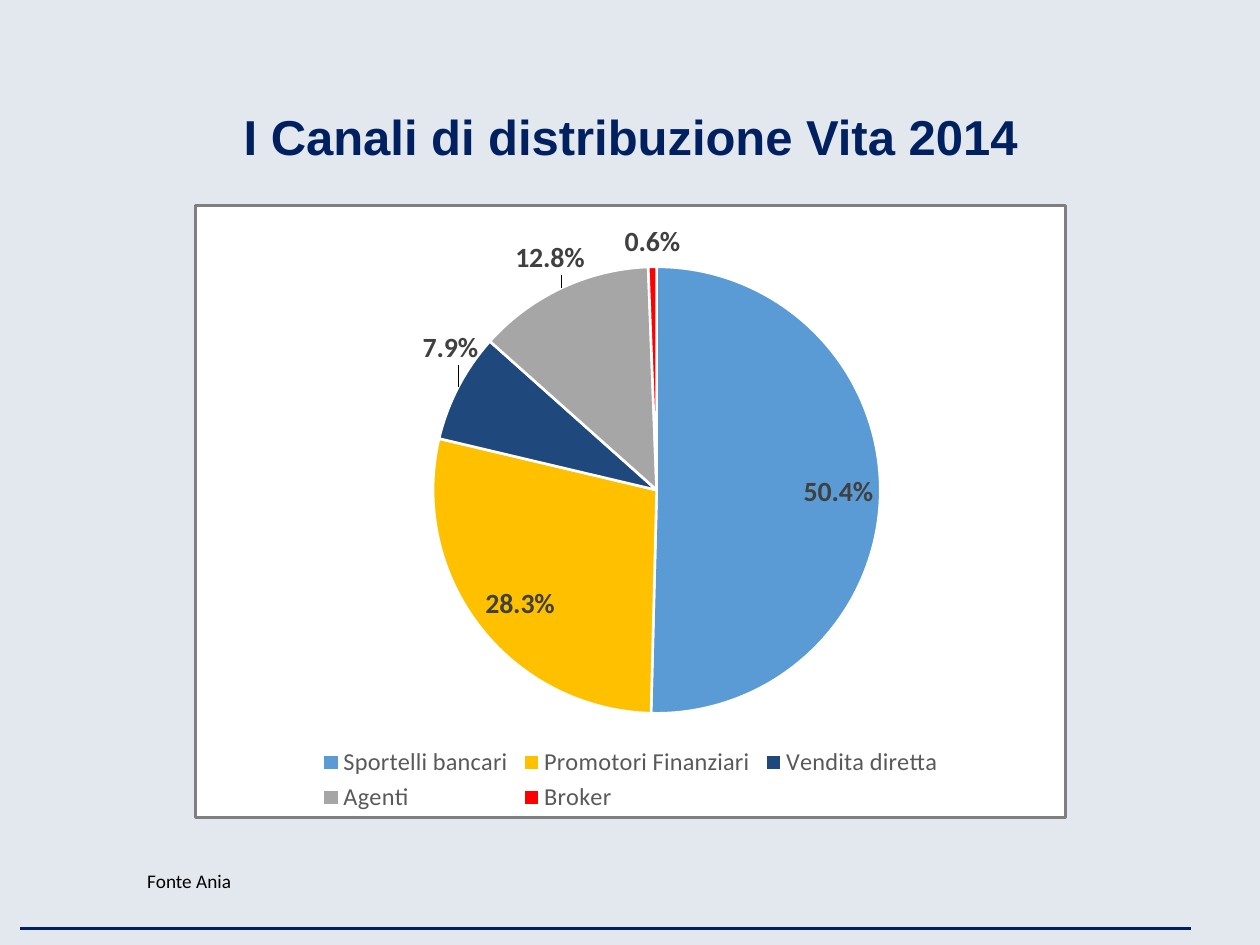
from lxml import etree
from pptx import Presentation
from pptx.chart.data import CategoryChartData
from pptx.dml.color import RGBColor
from pptx.enum.chart import XL_CHART_TYPE, XL_LABEL_POSITION, XL_LEGEND_POSITION
from pptx.enum.text import MSO_ANCHOR, PP_ALIGN
from pptx.oxml import parse_xml
from pptx.oxml.ns import nsdecls, qn
from pptx.util import Inches, Pt

PIE = XL_CHART_TYPE.PIE
INSIDE_END = XL_LABEL_POSITION.INSIDE_END
OUTSIDE_END = XL_LABEL_POSITION.OUTSIDE_END
LEGEND_BOTTOM = XL_LEGEND_POSITION.BOTTOM
MIDDLE = MSO_ANCHOR.MIDDLE
CENTER = PP_ALIGN.CENTER

COLORS = {
    "background": "E3E8EE", "navy": "002060", "black": "000000",
    "white": "FFFFFF", "border": "7F7F7F", "label": "404040", "legend": "595959",
}

# Category, share, slice colour, label position, label shift as part of the chart
SLICES = [
    ("Sportelli bancari", 0.504, "5B9BD5", INSIDE_END, None),
    ("Promotori Finanziari", 0.283, "FFC000", INSIDE_END, None),
    ("Vendita diretta", 0.079, "1F497D", OUTSIDE_END, (0.03, -0.03)),
    ("Agenti", 0.128, "A6A6A6", OUTSIDE_END, (0.03, -0.01)),
    ("Broker", 0.006, "FF0000", OUTSIDE_END, None),
]


def style_font(font, name, size, color, bold=False):
    font.name = name
    font.size = Pt(size)
    font.bold = bold
    font.color.rgb = RGBColor.from_string(COLORS[color])


def manual_layout(**values):
    layout = parse_xml(f"<c:layout {nsdecls('c')}><c:manualLayout/></c:layout>")
    for tag, value in values.items():
        etree.SubElement(layout[0], qn(f"c:{tag}")).set("val", str(value))
    return layout


presentation = Presentation()
presentation.slide_width = Inches(10)
presentation.slide_height = Inches(7.5)
slide = presentation.slides.add_slide(presentation.slide_layouts[6])
slide.background.fill.solid()
slide.background.fill.fore_color.rgb = RGBColor.from_string(COLORS["background"])

# Footer rule
rule = slide.shapes.add_connector(1, Inches(0.16), Inches(7.37), Inches(9.45), Inches(7.37))
rule.line.color.rgb = RGBColor.from_string(COLORS["navy"])
rule.line.width = Pt(2)
etree.SubElement(rule._element.spPr, qn("a:effectLst"))

# Title
title = slide.shapes.add_textbox(Inches(0.28), Inches(0.68), Inches(9.45), Inches(0.79))
title.text_frame.word_wrap = True
title.text_frame.vertical_anchor = MIDDLE
title.text_frame.text = "I Canali di distribuzione Vita 2014"
paragraph = title.text_frame.paragraphs[0]
paragraph.alignment = CENTER
style_font(paragraph.runs[0].font, "Arial", 28, "navy", True)

# Source note
note = slide.shapes.add_textbox(Inches(1.07), Inches(6.85), Inches(8.58), Inches(0.29))
note.text_frame.word_wrap = True
note.text_frame.text = "Fonte Ania"
style_font(note.text_frame.paragraphs[0].runs[0].font, "Calibri", 11, "black")

# Pie chart
chart_data = CategoryChartData(number_format="0.0%")
chart_data.categories = [entry[0] for entry in SLICES]
chart_data.add_series("Series 1", [entry[1] for entry in SLICES])
chart = slide.shapes.add_chart(
    PIE, Inches(1.54), Inches(1.62), Inches(6.93), Inches(4.88), chart_data).chart
chart.has_title = False
style_font(chart.font, "Calibri", 9, "black")
chart.has_legend = True
chart.legend.position = LEGEND_BOTTOM
chart.legend.include_in_layout = False
style_font(chart.legend.font, "Calibri", 14, "legend")

# Chart frame and plot placement
chart_space = chart._chartSpace
chart_space.find(qn("c:chart")).addnext(parse_xml(
    f"<c:spPr {nsdecls('c', 'a')}>"
    f'<a:solidFill><a:srgbClr val="{COLORS["white"]}"/></a:solidFill>'
    f'<a:ln w="{Pt(1.75)}"><a:solidFill><a:srgbClr val="{COLORS["border"]}"/>'
    "</a:solidFill></a:ln></c:spPr>"))
plot_area = chart_space.chart.plotArea
for old_layout in plot_area.findall(qn("c:layout")):
    plot_area.remove(old_layout)
plot_area.insert(0, manual_layout(
    layoutTarget="inner", xMode="edge", yMode="edge", x=0.27, y=0.1, w=0.52, h=0.73))

# Slices and their labels
plot = chart.plots[0]
plot.vary_by_categories = True
series = plot.series[0]
labels = series.data_labels
labels.show_value = True
labels.number_format = "0.0%"
labels.number_format_is_linked = False
style_font(labels.font, "Calibri", 16, "label", True)
for index, (_, _, color, position, shift) in enumerate(SLICES):
    point = series.points[index]
    point.format.fill.solid()
    point.format.fill.fore_color.rgb = RGBColor.from_string(color)
    point.format.line.color.rgb = RGBColor.from_string(COLORS["white"])
    point.format.line.width = Pt(1.5)
    label = point.data_label
    style_font(label.font, "Calibri", 16, "label", True)
    label.position = position
    if shift:
        label_element = labels._element.findall(qn("c:dLbl"))[index]
        label_element.find(qn("c:idx")).addnext(manual_layout(x=shift[0], y=shift[1]))

presentation.save("out.pptx")
